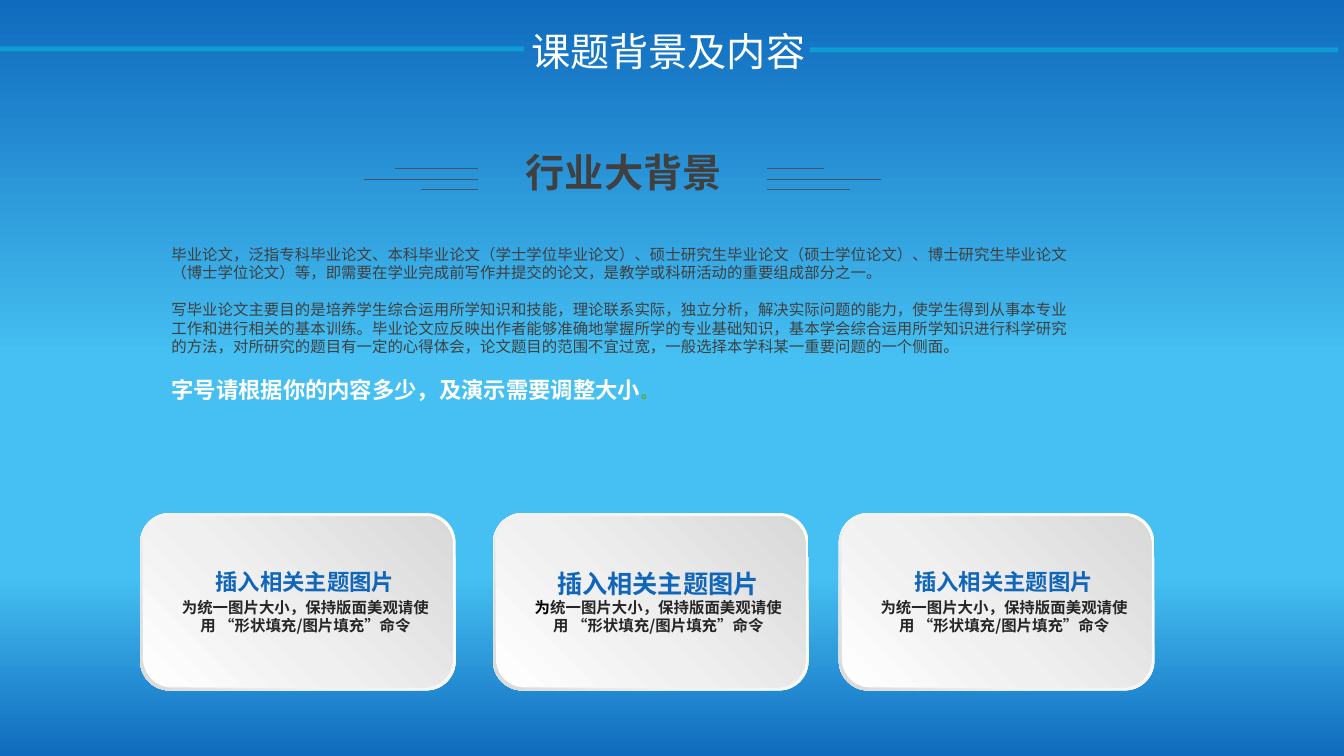
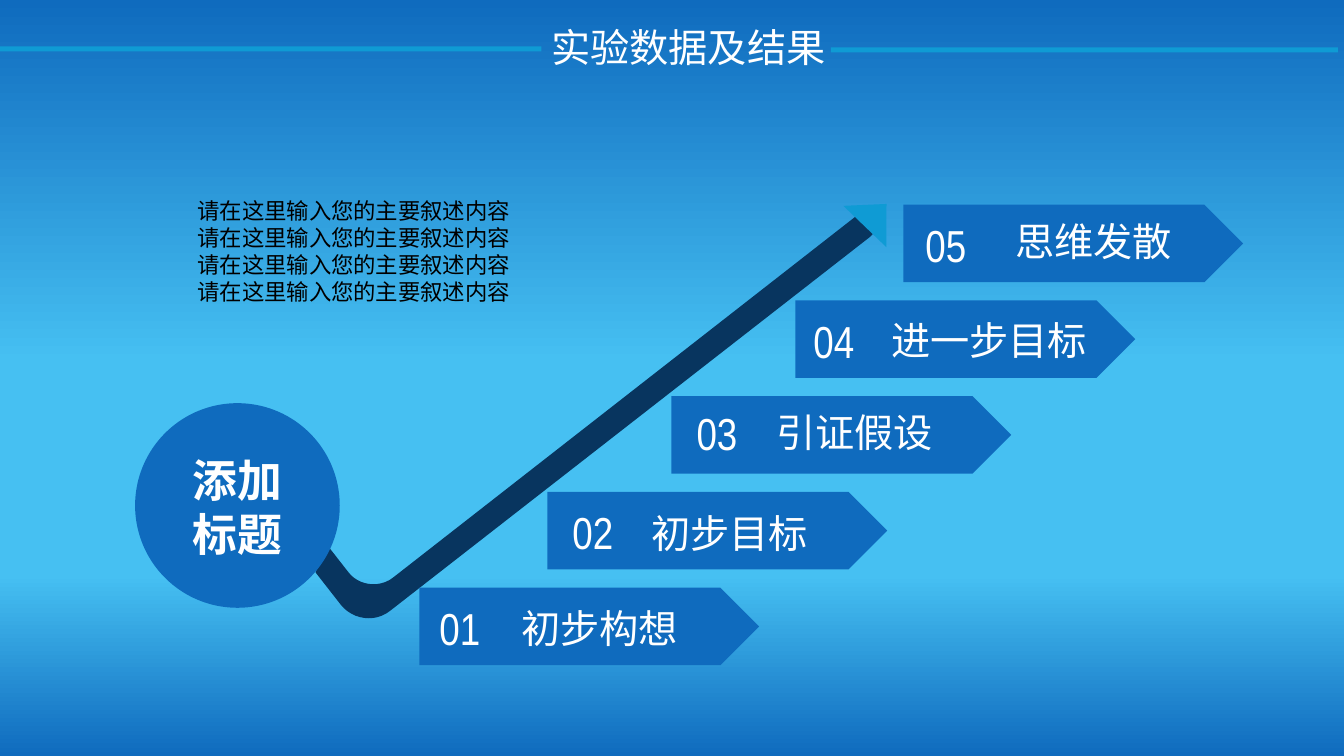
from copy import deepcopy
from lxml.etree import SubElement
from pptx import Presentation
from pptx.dml.color import RGBColor
from pptx.enum.shapes import MSO_CONNECTOR, MSO_SHAPE as SHAPE
from pptx.enum.text import PP_ALIGN as ALIGN
from pptx.oxml.ns import qn
from pptx.shapes.connector import Connector
from pptx.util import Inches, Pt

COLORS = {
    "blue": "0F6BBE", "sky": "46C0F2", "cyan": "0F9BD4", "navy": "08355F",
    "heading": "0F66BB", "rule": "44546A", "gray": "404040", "ink": "262626",
    "black": "000000", "white": "FFFFFF", "green": "679E2A",
    "pale": "F2F2F2", "mist": "F0F0F0", "silver": "D9D9D9",
}
RGB = {name: RGBColor.from_string(value) for name, value in COLORS.items()}
CJK = "Noto Sans CJK SC"
NARROW = "Arial Narrow"


def paint(owner, fill, stops, angle):
    fill.gradient()
    fill.gradient_angle = (360 - angle) % 360
    stop_list = owner.element.find(".//" + qn("a:gsLst"))
    for _ in stops[2:]:
        stop_list.append(deepcopy(stop_list[0]))
    for stop, (position, color) in zip(fill.gradient_stops, stops):
        stop.position = position
        stop.color.rgb = RGB[color]


def add_text(slide, box, paragraphs, size, color, bold=False, font=CJK,
             align=ALIGN.LEFT, inset=None, wrap=True, gaps=()):
    frame = slide.shapes.add_textbox(*map(Inches, box)).text_frame
    frame.word_wrap = wrap
    if inset is not None:
        frame.margin_left = frame.margin_right = Inches(inset)
        frame.margin_top = frame.margin_bottom = Inches(inset)
    for index, runs in enumerate(paragraphs):
        paragraph = frame.paragraphs[0] if index == 0 else frame.add_paragraph()
        paragraph.alignment = align
        if index < len(gaps):
            paragraph.space_before = Pt(gaps[index])
        tallest = size
        for words, *style in runs:
            run_size, run_color, run_bold = style or (size, color, bold)
            run = paragraph.add_run()
            run.text = words
            run.font.size = Pt(run_size)
            run.font.bold = run_bold
            run.font.name = font
            run.font.color.rgb = RGB[run_color]
            east_asian = SubElement(run.font._element, qn("a:ea"))
            east_asian.set("typeface", font)
            tallest = max(tallest, run_size)
        paragraph.line_spacing = Pt(tallest * 1.2)


prs = Presentation()
prs.slide_width, prs.slide_height = Inches(13.33), Inches(7.5)
master = prs.slide_master
paint(master, master.background.fill,
      [(0, "blue"), (0.48, "sky"), (0.76, "sky"), (1, "blue")], 90)

headers = [
    ("课题背景及内容", (5.17, 0.22, 2.96, 0.57), 5.2, 8.03),
    ("实验数据及结果", (5.37, 0.18, 3.84, 0.57), 5.37, 8.24),
]
for title, title_box, left_end, right_start in headers:
    slide = prs.slides.add_slide(prs.slide_layouts[6])
    for left, top, right in ((0, 0.46, left_end), (right_start, 0.47, 13.27)):
        band = slide.shapes.add_shape(
            SHAPE.RECTANGLE, Inches(left), Inches(top), Inches(right - left), Inches(0.05))
        band.fill.solid()
        band.fill.fore_color.rgb = RGB["cyan"]
    add_text(slide, title_box, [[(title,)]], 28, "white")

background, results = prs.slides

add_text(background, (4.53, 1.47, 3.31, 0.62), [[("行业大背景",)]], 28, "gray",
         bold=True, align=ALIGN.CENTER, inset=0)
for start, y, end in (
    (4.74, 1.67, 3.92), (4.74, 1.78, 3.61), (4.74, 1.88, 4.18),
    (7.61, 1.67, 8.17), (7.61, 1.78, 8.74), (7.61, 1.88, 8.43),
):
    rule = background.shapes.add_connector(
        MSO_CONNECTOR.STRAIGHT, Inches(start), Inches(y), Inches(end), Inches(y))
    rule.line.color.rgb = RGB["rule"]
    rule.line.width = Pt(0.5)

add_text(background, (1.7, 2.43, 8.98, 1.58), [
    [("毕业论文，泛指专科毕业论文、本科毕业论文（学士学位毕业论文）、硕士研究生毕业论文（硕士学位论文）、"
      "博士研究生毕业论文（博士学位论文）等，即需要在学业完成前写作并提交的论文，"
      "是教学或科研活动的重要组成部分之一。",)],
    [("写毕业论文主要目的是培养学生综合运用所学知识和技能，理论联系实际，独立分析，解决实际问题的能力，"
      "使学生得到从事本专业工作和进行相关的基本训练。毕业论文应反映出作者能够准确地掌握所学的专业基础知识，"
      "基本学会综合运用所学知识进行科学研究的方法，对所研究的题目有一定的心得体会，"
      "论文题目的范围不宜过宽，一般选择本学科某一重要问题的一个侧面。",)],
    [("字号请根据你的内容多少，及演示需要调整大小", 16, "white", True),
     ("。", 11, "green", True)],
], 11, "gray", inset=0, gaps=(0, 13.2, 14.4))

hint = "统一图片大小，保持版面美观请使用 “形状填充/图片填充”命令"
for left, heading_size, first_color in ((1.39, 16, "ink"), (4.89, 18, "black"), (8.32, 16, "ink")):
    for inset, middle, shade, angle in ((0, 0.62, "pale", 135), (0.03, 0.42, "mist", 315)):
        card = background.shapes.add_shape(
            SHAPE.ROUNDED_RECTANGLE, Inches(left + inset), Inches(5.09 + inset),
            Inches(3.13 - 2 * inset), Inches(1.76 - 2 * inset))
        paint(card, card.fill, [(0, "white"), (middle, shade), (1, "silver")], angle)
    add_text(background, (left + 0.58, 5.64, 2.11, 0.3), [[("插入相关主题图片",)]],
             heading_size, "heading", bold=True, align=ALIGN.CENTER, inset=0)
    add_text(background, (left + 0.35, 5.93, 2.58, 0.37),
             [[("为", 11, first_color, True), (hint,)]],
             11, "ink", bold=True, align=ALIGN.CENTER, inset=0)

outline = [
    [(8.51, 2.13)], [(8.75, 2.13)], [(8.74, 2.18)],
    [(8.72, 2.24), (8.68, 2.3), (8.63, 2.35)], [(3.87, 6.06)],
    [(3.72, 6.18), (3.5, 6.15), (3.38, 6)],
    [(3.13, 5.68)], [(3.18, 5.54)], [(3.2, 5.35)], [(3.45, 5.67)],
    [(3.55, 5.81), (3.76, 5.84), (3.9, 5.73)],
]
points = list(outline[0])
for segment in outline[1:]:
    if len(segment) == 1:
        points += segment
        continue
    corners = [points[-1], *segment]
    for step in range(1, 13):
        t = step / 12
        weights = ((1 - t) ** 3, 3 * t * (1 - t) ** 2, 3 * t * t * (1 - t), t ** 3)
        points.append(tuple(
            sum(w * corner[axis] for w, corner in zip(weights, corners)) for axis in (0, 1)))
vertices = [(Inches(x), Inches(y)) for x, y in points]
builder = results.shapes.build_freeform(*vertices[0])
builder.add_line_segments(vertices[1:], close=True)
arrow_shaft = builder.convert_to_shape()
arrow_shaft.fill.solid()
arrow_shaft.fill.fore_color.rgb = RGB["navy"]

stages = [
    ("初步构想", 4.16, (5.07, 5.95, 1.77), (4.26, 5.91, 0.61)),
    ("初步目标", 5.43, (6.36, 5, 1.77), (5.58, 4.96, 0.67)),
    ("引证假设", 6.66, (7.6, 4, 1.77), (6.81, 3.98, 0.68)),
    ("进一步目标", 7.89, (8.74, 3.09, 2.17), (7.97, 3.06, 0.67)),
    ("思维发散", 8.96, (9.97, 2.11, 1.77), (9.08, 2.11, 0.68)),
]
blocks = [
    (SHAPE.ISOSCELES_TRIANGLE, (8.39, 1.98, 0.59, 0.31), 43.9, "cyan"),
    (SHAPE.OVAL, (1.34, 4, 2.03, 2.03), 0, "blue"),
]
blocks += [(SHAPE.PENTAGON, (stage[1], 5.83 - 0.95 * row, 3.37, 0.77), 0, "blue")
           for row, stage in enumerate(stages)]
for kind, box, rotation, color in blocks:
    block = results.shapes.add_shape(kind, *map(Inches, box))
    block.rotation = rotation
    block.fill.solid()
    block.fill.fore_color.rgb = RGB[color]

for number, (label, _, label_box, number_box) in enumerate(stages, 1):
    add_text(results, (*label_box, 0.57), [[(label,)]], 28, "white", wrap=False)
    add_text(results, (*number_box, 0.64), [[(f"{number:02}",)]], 32, "white",
             font=NARROW, wrap=False)
add_text(results, (1.81, 4.44, 1.1, 1.18), [[("添加",)], [("标题",)]], 32, "white",
         bold=True, wrap=False)
add_text(results, (1.86, 1.91, 3.34, 1.72), [[("请在这里输入您的主要叙述内容",)]] * 4,
         16, "black", wrap=False)

for slide in prs.slides:
    for shape in slide.shapes:
        if isinstance(shape, Connector):
            SubElement(shape.element.spPr, qn("a:effectLst"))
        else:
            shape.line.fill.background()
            shape.shadow.inherit = False

prs.save("out.pptx")
